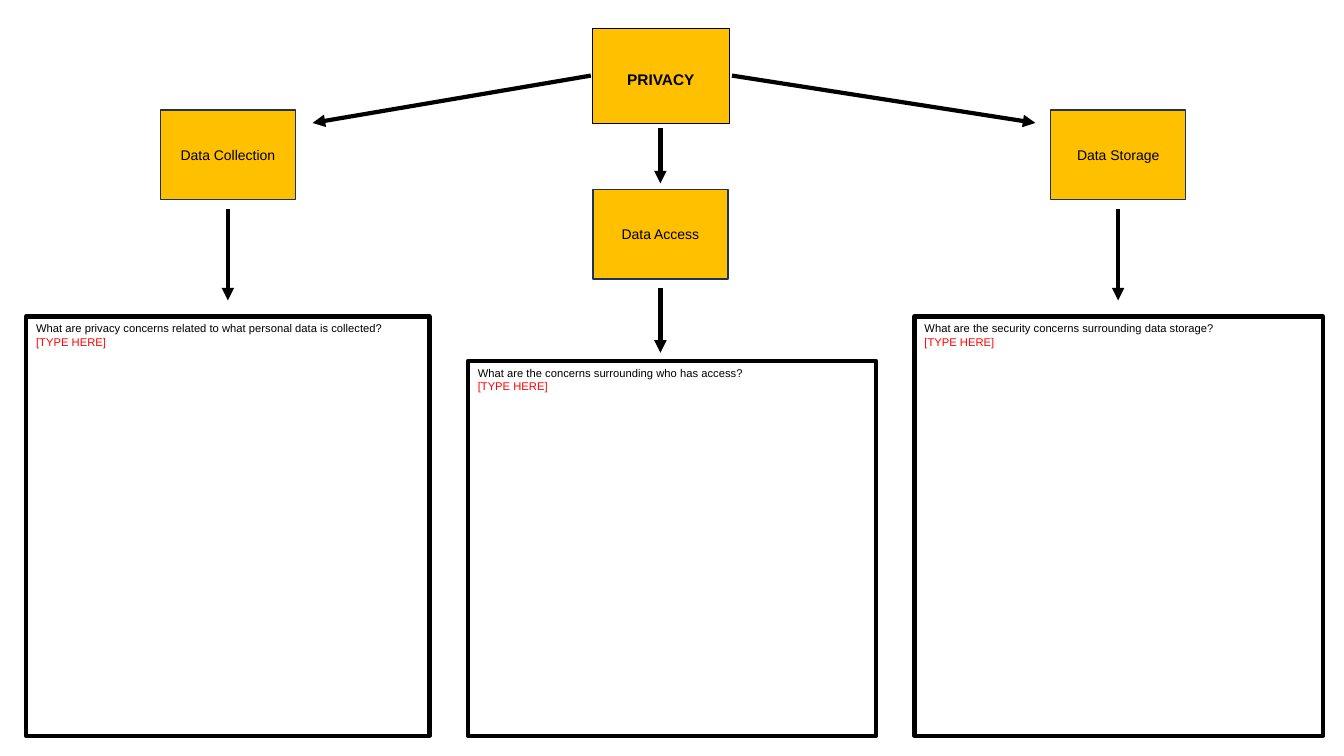
from dataclasses import dataclass

from lxml.etree import SubElement
from pptx import Presentation
from pptx.dml.color import RGBColor
from pptx.enum.shapes import MSO_CONNECTOR, MSO_SHAPE
from pptx.enum.text import MSO_ANCHOR, MSO_AUTO_SIZE, PP_ALIGN
from pptx.oxml.ns import qn
from pptx.shapes.autoshape import Shape
from pptx.slide import Slide
from pptx.text.text import _Paragraph as Para
from pptx.util import Inches, Pt

BLACK = RGBColor(0x00, 0x00, 0x00)
WHITE = RGBColor(0xFF, 0xFF, 0xFF)
GOLD = RGBColor(0xFF, 0xC0, 0x00)
NAVY = RGBColor(0x1E, 0x32, 0x56)
RED = RGBColor(0xFF, 0x00, 0x00)

BOX_W, BOX_H = 1.34, 0.89
BASE = 7.3  # bottom edge of the answer panels
GAP = 0.09  # space between a topic box and its arrow


@dataclass
class Topic:
    name: str
    left: float
    top: float
    tip: float  # where the arrow to the panel ends
    ask: str
    side: float  # left edge of the panel
    head: float  # top edge of the panel
    width: float


@dataclass
class Arrow:
    x1: float
    y1: float
    x2: float
    y2: float


TOPICS = [
    Topic("Data Collection", 1.59, 1.09, 2.98,
          "What are privacy concerns related to what personal data is collected?",
          0.26, 3.14, 4.0),
    Topic("Data Access", 5.88, 1.88, 3.5,
          "What are the concerns surrounding who has access?",
          4.64, 3.58, 4.05),
    Topic("Data Storage", 10.42, 1.09, 2.98,
          "What are the security concerns surrounding data storage?",
          9.07, 3.14, 4.05),
]

# From the title to each topic
LINKS = [
    Arrow(5.86, 0.75, 3.1, 1.22),
    Arrow(6.55, 1.27, 6.55, 1.82),
    Arrow(7.26, 0.75, 10.27, 1.22),
]


def paint(shape: Shape, fill: RGBColor, line: RGBColor, width: float) -> None:
    shape.fill.solid()
    shape.fill.fore_color.rgb = fill
    shape.line.color.rgb = line
    shape.line.width = Pt(width)


def style(para: Para, size: float, color: RGBColor, align: PP_ALIGN, bold: bool = False) -> None:
    para.alignment = align
    font = para.font
    font.name = "Arial"
    font.size = Pt(size)
    font.bold = bold
    font.color.rgb = color


def add_box(slide: Slide, left: float, top: float, width: float, height: float) -> Shape:
    box = slide.shapes.add_shape(MSO_SHAPE.RECTANGLE, Inches(left), Inches(top),
                                 Inches(width), Inches(height))
    box.shadow.inherit = False
    box.text_frame.word_wrap = True
    return box


def add_title(slide: Slide) -> None:
    title = slide.shapes.title
    title.left, title.top = Inches(5.88), Inches(0.28)
    title.width, title.height = Inches(1.35), Inches(0.94)
    paint(title, GOLD, BLACK, 0.5)
    frame = title.text_frame
    frame.text = "PRIVACY"
    frame.auto_size = MSO_AUTO_SIZE.NONE
    frame.vertical_anchor = MSO_ANCHOR.MIDDLE
    frame.margin_top = Inches(0.12)
    style(frame.paragraphs[0], 11, BLACK, PP_ALIGN.CENTER, bold=True)


def add_arrow(slide: Slide, arrow: Arrow) -> None:
    link = slide.shapes.add_connector(MSO_CONNECTOR.STRAIGHT, Inches(arrow.x1), Inches(arrow.y1),
                                      Inches(arrow.x2), Inches(arrow.y2))
    link.line.color.rgb = BLACK
    link.line.width = Pt(3)
    props = link._element.spPr
    SubElement(props.get_or_add_ln(), qn("a:tailEnd"), type="triangle")
    SubElement(props, qn("a:effectLst"))


def add_topic(slide: Slide, topic: Topic) -> None:
    # Topic box
    box = add_box(slide, topic.left, topic.top, BOX_W, BOX_H)
    paint(box, GOLD, NAVY, 1)
    box.text_frame.text = topic.name
    box.text_frame.vertical_anchor = MSO_ANCHOR.MIDDLE
    style(box.text_frame.paragraphs[0], 10, BLACK, PP_ALIGN.CENTER)

    # Answer panel
    panel = add_box(slide, topic.side, topic.head, topic.width, BASE - topic.head)
    paint(panel, WHITE, BLACK, 3)
    frame = panel.text_frame
    frame.text = f"{topic.ask}\n[TYPE HERE]"
    frame.vertical_anchor = MSO_ANCHOR.TOP
    for para, color in zip(frame.paragraphs, (BLACK, RED)):
        style(para, 8, color, PP_ALIGN.LEFT)

    # Arrow from box to panel
    mid = topic.left + BOX_W / 2
    add_arrow(slide, Arrow(mid, topic.top + BOX_H + GAP, mid, topic.tip))


def main() -> None:
    deck = Presentation()
    deck.slide_width, deck.slide_height = Inches(13.33), Inches(7.5)
    slide = deck.slides.add_slide(deck.slide_layouts[5])
    add_title(slide)
    for topic in TOPICS:
        add_topic(slide, topic)
    for link in LINKS:
        add_arrow(slide, link)
    deck.save("out.pptx")


if __name__ == "__main__":
    main()
